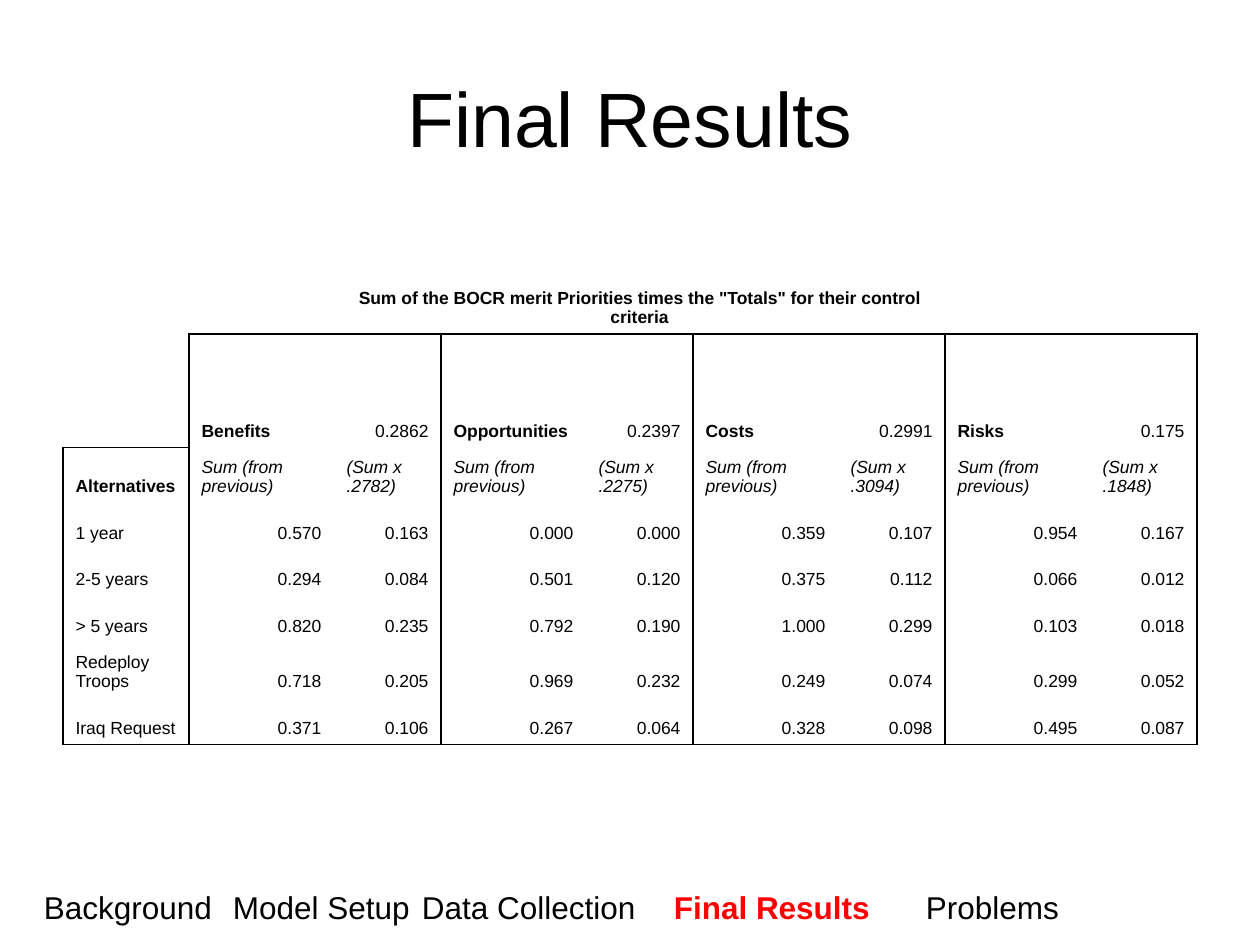
import pptx
import pptx.util
import pptx.dml.color
import pptx.enum.text
import pptx.oxml.ns
import lxml.etree as etree

Inches, Pt = pptx.util.Inches, pptx.util.Pt
Align = pptx.enum.text.PP_ALIGN
Anchor = pptx.enum.text.MSO_ANCHOR
BLACK = pptx.dml.color.RGBColor(0, 0, 0)
RED = pptx.dml.color.RGBColor(255, 0, 0)
qn = pptx.oxml.ns.qn

TITLE = "Final Results"
CAPTION = 'Sum of the BOCR merit Priorities times the "Totals" for their control criteria'
MERITS = [
    ("Benefits", "0.2862", "(Sum x .2782)"),
    ("Opportunities", "0.2397", "(Sum x .2275)"),
    ("Costs", "0.2991", "(Sum x .3094)"),
    ("Risks", "0.175", "(Sum x .1848)"),
]
SCORES = [
    ("1 year", "0.570 0.163 0.000 0.000 0.359 0.107 0.954 0.167"),
    ("2-5 years", "0.294 0.084 0.501 0.120 0.375 0.112 0.066 0.012"),
    ("> 5 years", "0.820 0.235 0.792 0.190 1.000 0.299 0.103 0.018"),
    ("Redeploy Troops", "0.718 0.205 0.969 0.232 0.249 0.074 0.299 0.052"),
    ("Iraq Request", "0.371 0.106 0.267 0.064 0.328 0.098 0.495 0.087"),
]
STEPS = [
    ("Background\tModel Setup\tData Collection\t", False),
    ("Final Results", True),
    (" \tProblems", False),
]
WIDTHS = [1] + [1.15, 0.85] * 4
HEIGHTS = [0.9, 0.9, 0.44, 0.37, 0.37, 0.37, 0.44, 0.37, 0.9]
HEAD, SUB, LAST = 1, 2, 7


def write(para, text, size=10, bold=False, italic=False, color=BLACK, align=Align.LEFT):
    para.alignment = align
    run = para.add_run()
    run.text = text
    font = run.font
    font.name, font.size = "Arial", Pt(size)
    font.bold, font.italic = bold, italic
    font.color.rgb = color


def fill_in(table, row, col, text, **style):
    cell = table.cell(row, col)
    cell.vertical_anchor = Anchor.BOTTOM
    write(cell.text_frame.paragraphs[0], text, **style)


def upright(row, edge):
    """Tell whether a line runs beside this row at a column edge."""
    first = SUB if edge == 0 else HEAD
    return first <= row <= LAST and (edge == 0 or edge % 2 == 1)


def level(edge, col):
    """Tell whether a line runs across this column at a row edge."""
    return edge == LAST + 1 or edge == (SUB if col == 0 else HEAD)


def rule(cell, sides):
    props = cell._tc.get_or_add_tcPr()
    for side, shown in sides:
        line = etree.SubElement(props, qn("a:ln" + side), w=str(Pt(1)))
        if shown:
            paint = etree.SubElement(line, qn("a:solidFill"))
            etree.SubElement(paint, qn("a:srgbClr"), val=str(BLACK))
        else:
            etree.SubElement(line, qn("a:noFill"))
    cell.fill.background()


def add_scores(slide):
    frame = slide.shapes.add_table(
        len(HEIGHTS), len(WIDTHS), Inches(0.5), Inches(1.75),
        Inches(sum(WIDTHS)), Inches(sum(HEIGHTS)))
    table = frame.table
    table.first_row = table.horz_banding = False
    for col, width in enumerate(WIDTHS):
        table.columns[col].width = Inches(width)
    for row, height in enumerate(HEIGHTS):
        table.rows[row].height = Inches(height)
        for col in range(len(WIDTHS)):
            rule(table.cell(row, col), [
                ("L", upright(row, col)), ("R", upright(row, col + 1)),
                ("T", level(row, col)), ("B", level(row + 1, col))])

    table.cell(0, 2).merge(table.cell(0, 6))
    fill_in(table, 0, 2, CAPTION, bold=True, align=Align.CENTER)
    fill_in(table, SUB, 0, "Alternatives", bold=True)
    for i, (name, weight, factor) in enumerate(MERITS):
        col = 1 + 2 * i
        fill_in(table, HEAD, col, name, bold=True)
        fill_in(table, HEAD, col + 1, weight, align=Align.RIGHT)
        fill_in(table, SUB, col, "Sum (from previous)", italic=True)
        fill_in(table, SUB, col + 1, factor, italic=True)
    for row, (name, values) in enumerate(SCORES, SUB + 1):
        fill_in(table, row, 0, name)
        for col, value in enumerate(values.split(), 1):
            fill_in(table, row, col, value, align=Align.RIGHT)


def main():
    deck = pptx.Presentation()
    deck.slide_width, deck.slide_height = Inches(10), Inches(7.5)
    slide = deck.slides.add_slide(deck.slide_layouts[5])

    title = slide.shapes.title
    title.left, title.top = Inches(0.5), Inches(0.3)
    title.width, title.height = Inches(9), Inches(1.25)
    title.text_frame.vertical_anchor = Anchor.MIDDLE
    write(title.text_frame.paragraphs[0], TITLE, size=44, align=Align.CENTER)

    box = slide.shapes.add_textbox(Inches(0.25), Inches(7), Inches(9.5), Inches(0.4))
    box.text_frame.word_wrap = True
    for text, active in STEPS:
        write(box.text_frame.paragraphs[0], text, size=18, bold=active,
              color=RED if active else BLACK)

    add_scores(slide)
    deck.save("out.pptx")


if __name__ == "__main__":
    main()
